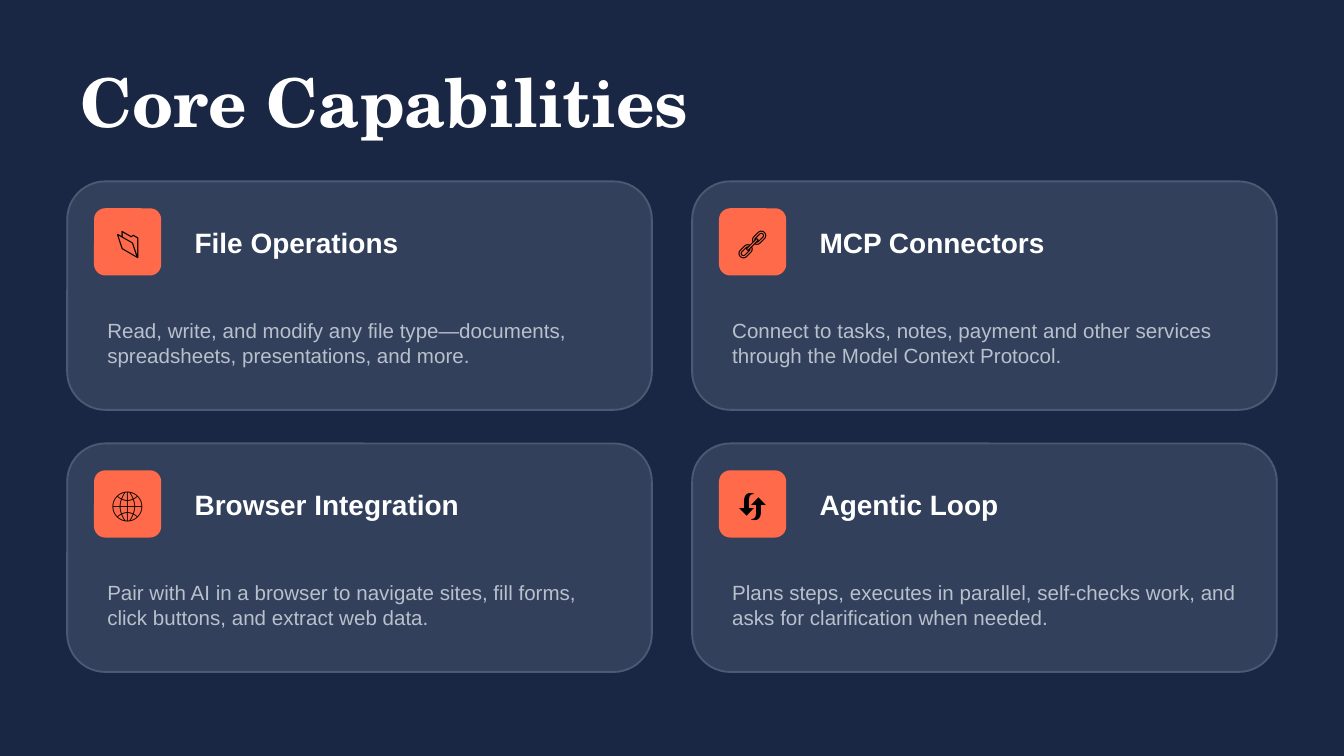
from pptx import Presentation
from pptx.dml.color import RGBColor
from pptx.enum.shapes import MSO_SHAPE
from pptx.enum.text import MSO_ANCHOR, MSO_AUTO_SIZE, PP_ALIGN
from pptx.oxml.ns import qn
from pptx.util import Pt
from lxml.etree import SubElement

NAVY, SLATE, CORAL = "1A2744", "4A5A74", "FF6B4A"
WHITE, GREY, BLACK = "FFFFFF", "B8C0CC", "000000"

CAPABILITIES = [
    ("📂", "File Operations",
     "Read, write, and modify any file type—documents, "
     "spreadsheets, presentations, and more."),
    ("🔗", "MCP Connectors",
     "Connect to tasks, notes, payment and other services "
     "through the Model Context Protocol."),
    ("🌐", "Browser Integration",
     "Pair with AI in a browser to navigate sites, fill forms, "
     "click buttons, and extract web data."),
    ("🔄", "Agentic Loop",
     "Plans steps, executes in parallel, self-checks work, and "
     "asks for clarification when needed."),
]


def paint(fill, colour, alpha=None):
    fill.solid()
    fill.fore_color.rgb = RGBColor.from_string(colour)
    if alpha is not None:
        colour_element = fill._xPr.find(qn("a:solidFill"))[0]
        SubElement(colour_element, qn("a:alpha")).set("val", str(alpha * 1000))


def write(box, text, size, colour, font="Arial", bold=False, align=PP_ALIGN.LEFT):
    frame = box.text_frame
    frame.word_wrap = True
    frame.auto_size = MSO_AUTO_SIZE.NONE
    frame.vertical_anchor = MSO_ANCHOR.MIDDLE
    para = frame.paragraphs[0]
    para.alignment = align
    span = para.add_run()
    span.text = text
    span.font.name = font
    span.font.size = Pt(size)
    span.font.bold = bold
    paint(span.font.fill, colour)


def add_text(page, left, top, width, height, text, **style):
    box = page.shapes.add_textbox(Pt(left), Pt(top), Pt(width), Pt(height))
    write(box, text, **style)


def add_panel(page, left, top, width, height, colour, alpha=None, line=None):
    panel = page.shapes.add_shape(
        MSO_SHAPE.ROUNDED_RECTANGLE, Pt(left), Pt(top), Pt(width), Pt(height))
    panel.shadow.inherit = False
    paint(panel.fill, colour, alpha)
    if line:
        paint(panel.line.fill, line)
        panel.line.width = Pt(1)
    else:
        panel.line.fill.background()


def add_title(page, left, top, width, height, text):
    title = page.shapes.title
    title.left, title.top = Pt(left), Pt(top)
    title.width, title.height = Pt(width), Pt(height)
    write(title, text, size=36, colour=WHITE, font="TeX Gyre Schola", bold=True)


def add_card(page, left, top, width, height, icon, heading, detail):
    pad, badge = 14.4, 36
    inner_left, inner_top = left + pad, top + pad
    add_panel(page, left, top, width, height, SLATE, alpha=50, line=SLATE)
    # Icon badge
    add_panel(page, inner_left, inner_top, badge, badge, CORAL)
    add_text(page, inner_left, inner_top, badge, badge, icon,
             size=16, colour=BLACK, font="Calibri", align=PP_ALIGN.CENTER)
    # Heading and description
    add_text(page, left + 61.2, top + 18, width - 75.6, 28.8, heading,
             size=15, colour=WHITE, bold=True)
    add_text(page, inner_left, top + 61.2, 288, 50.4, detail,
             size=11, colour=GREY)


def main():
    deck = Presentation()
    deck.slide_width, deck.slide_height = Pt(720), Pt(405)
    page = deck.slides.add_slide(deck.slide_layouts[5])
    paint(page.background.fill, NAVY)

    add_title(page, 36, 28.8, 648, 50.4, "Core Capabilities")

    # Two-by-two grid of cards
    card_width, card_height = 313.2, 122.4
    column_gap, row_gap = 21.6, 18
    for index, capability in enumerate(CAPABILITIES):
        row, column = divmod(index, 2)
        add_card(page, 36 + column * (card_width + column_gap),
                 97.2 + row * (card_height + row_gap),
                 card_width, card_height, *capability)

    deck.save("out.pptx")


if __name__ == "__main__":
    main()
